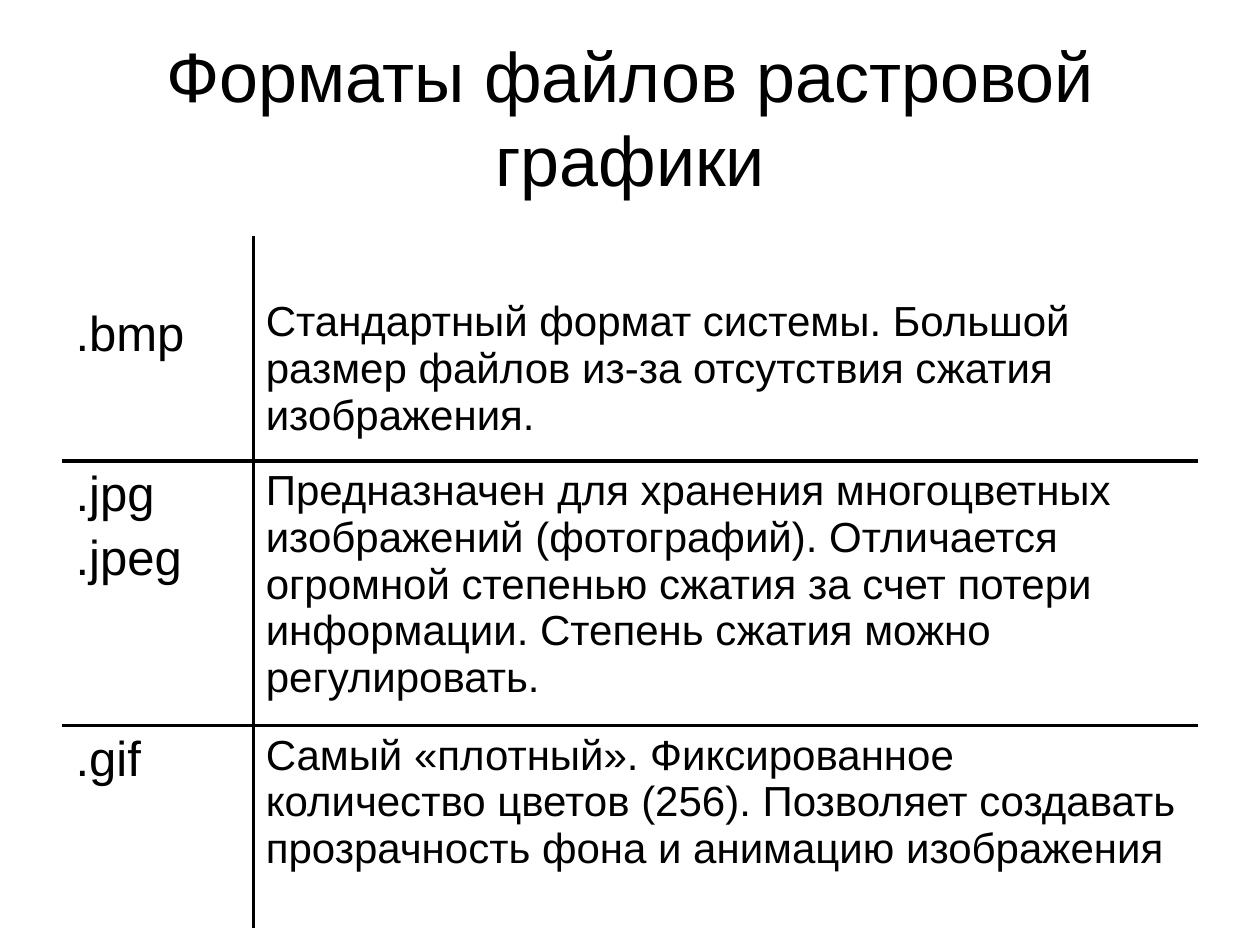
"""Build a slide with a table of raster graphics file formats."""
from lxml.etree import SubElement
from pptx import Presentation
from pptx.dml.color import RGBColor
from pptx.enum.text import MSO_ANCHOR, PP_ALIGN
from pptx.oxml.ns import qn
from pptx.util import Inches, Pt

COLORS = {"ink": "000000"}
FORMATS = [
    (1.78, [".bmp"],
     "Стандартный формат системы. Большой размер файлов из-за отсутствия "
     "сжатия изображения."),
    (2.1, [".jpg", ".jpeg"],
     "Предназначен для хранения многоцветных изображений (фотографий). "
     "Отличается огромной степенью сжатия за счет потери информации. "
     "Степень сжатия можно регулировать."),
    (1.61, [".gif"],
     "Самый «плотный». Фиксированное количество цветов (256). Позволяет "
     "создавать прозрачность фона и анимацию изображения"),
]
COL_WIDTHS = [1.51, 7.49]
SIZES = [28, 24]
FIRST_ROW_TOPS = [0.56, 0.49]


def write(tf, lines, size, align=PP_ALIGN.LEFT, gap=5):
    for i, line in enumerate(lines):
        p = tf.paragraphs[0] if i == 0 else tf.add_paragraph()
        p.alignment = align
        if i:
            p.space_before = Pt(gap)
        r = p.add_run()
        r.text = line
        r.font.name = "Arial"
        r.font.size = Pt(size)
        r.font.color.rgb = RGBColor.from_string(COLORS["ink"])


def add_border(cell, side):
    ln = SubElement(cell._tc.get_or_add_tcPr(), qn(f"a:ln{side}"), w=str(Pt(2.25)))
    fill = SubElement(ln, qn("a:solidFill"))
    SubElement(fill, qn("a:srgbClr"), val=COLORS["ink"])


prs = Presentation()
prs.slide_width, prs.slide_height = Inches(10), Inches(7.5)
s = prs.slides.add_slide(prs.slide_layouts[6])

title = s.shapes.add_textbox(Inches(0.5), Inches(0.3), Inches(9), Inches(1.25))
tf = title.text_frame
tf.word_wrap = True
tf.vertical_anchor = MSO_ANCHOR.MIDDLE
write(tf, ["Форматы файлов растровой графики"], 40, align=PP_ALIGN.CENTER)

table = s.shapes.add_table(len(FORMATS), len(COL_WIDTHS), Inches(0.5), Inches(1.88),
                           Inches(9), Inches(5.49)).table
table.first_row = False
table.horz_banding = False
for col, width in zip(table.columns, COL_WIDTHS):
    col.width = Inches(width)

last_row = len(FORMATS) - 1
for i, (height, extensions, description) in enumerate(FORMATS):
    table.rows[i].height = Inches(height)
    for j, lines in enumerate([extensions, [description]]):
        cell = table.cell(i, j)
        cell.margin_left = cell.margin_right = Inches(0.1)
        cell.margin_top = Inches(0.05 if i else FIRST_ROW_TOPS[j])
        cell.margin_bottom = Inches(0.05)
        write(cell.text_frame, lines, SIZES[j])
        inner_sides = {"L": j == 1, "R": j == 0, "T": i > 0, "B": i < last_row}
        for side, is_inner in inner_sides.items():
            if is_inner:
                add_border(cell, side)
        cell.fill.background()

prs.save("out.pptx")
